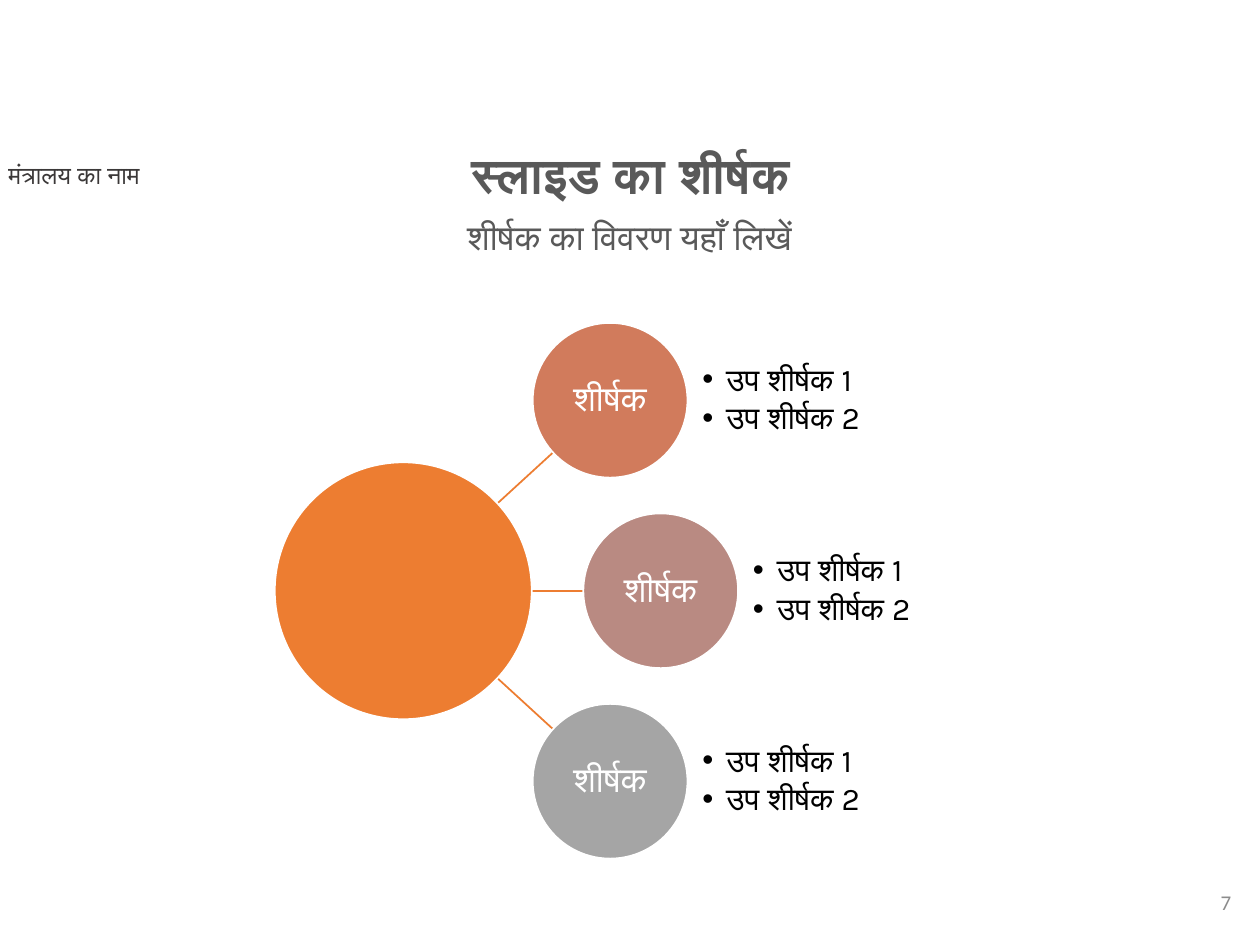
from lxml import etree
from pptx import Presentation
from pptx.dml.color import RGBColor
from pptx.enum.shapes import MSO_CONNECTOR, MSO_SHAPE
from pptx.enum.text import MSO_ANCHOR, PP_ALIGN
from pptx.oxml.ns import qn
from pptx.util import Cm, Pt

STRAIGHT = MSO_CONNECTOR.STRAIGHT
ELLIPSE = MSO_SHAPE.OVAL
TOP, MIDDLE = MSO_ANCHOR.TOP, MSO_ANCHOR.MIDDLE
LEFT, CENTER, RIGHT = PP_ALIGN.LEFT, PP_ALIGN.CENTER, PP_ALIGN.RIGHT

ORANGE, WHITE, BLACK, GREY = "ED7D31", "FFFFFF", "000000", "595959"
HUB_X, HUB_Y, HUB_SIZE = 8.13, 11.91, 5.18
NODE_SIZE, NODE_PITCH = 3.12, 3.84
NODES = [(12.3, "D17B5C"), (13.32, "B98A82"), (12.3, "A5A5A5")]
SUBTITLES = ["उप शीर्षक 1", "उप शीर्षक 2"]


def color(value):
    return RGBColor.from_string(value)


def add_bullet(para, indent):
    properties = para._p.get_or_add_pPr()
    properties.set("marL", str(Cm(indent)))
    properties.set("indent", str(-Cm(indent)))
    etree.SubElement(properties, qn("a:buFont")).set("typeface", "Arial")
    etree.SubElement(properties, qn("a:buChar")).set("char", "•")


def write(frame, lines, size=18, font="Calibri", fill=BLACK, bold=False,
          align=LEFT, anchor=TOP, spacing=1.0, after=0, inset=None, bullet=False):
    frame.word_wrap = True
    frame.vertical_anchor = anchor
    if inset is not None:
        frame.margin_left = frame.margin_right = Cm(inset)
        frame.margin_top = frame.margin_bottom = Cm(inset)
    for index, line in enumerate(lines):
        para = frame.add_paragraph() if index else frame.paragraphs[0]
        para.alignment = align
        para.line_spacing = spacing
        para.space_after = Pt(after)
        if bullet:
            add_bullet(para, 0.48)
        span = para.add_run()
        span.text = line
        span.font.name = font
        span.font.size = Pt(size)
        span.font.bold = bold
        span.font.color.rgb = color(fill)


def add_text(page, lines, left, top, width, height, **style):
    box = page.shapes.add_textbox(Cm(left), Cm(top), Cm(width), Cm(height))
    write(box.text_frame, lines, **style)


def add_circle(page, x, y, size, fill):
    circle = page.shapes.add_shape(
        ELLIPSE, Cm(x - size / 2), Cm(y - size / 2), Cm(size), Cm(size))
    circle.shadow.inherit = False
    circle.fill.solid()
    circle.fill.fore_color.rgb = color(fill)
    circle.line.color.rgb = color(WHITE)
    circle.line.width = Pt(1)
    return circle


def add_line(page, x1, y1, x2, y2):
    line = page.shapes.add_connector(STRAIGHT, Cm(x1), Cm(y1), Cm(x2), Cm(y2))
    line.line.color.rgb = color(ORANGE)
    line.line.width = Pt(1)
    etree.SubElement(line._element.spPr, qn("a:effectLst"))


def add_spokes(page):
    start = 9.96
    for side in (1, -1):
        add_line(page, start, HUB_Y + side * 1.7, 11.15, HUB_Y + side * 2.79)
    add_line(page, start, HUB_Y, NODES[1][0] - NODE_SIZE / 2, HUB_Y)


def add_node(page, x, y, fill):
    circle = add_circle(page, x, y, NODE_SIZE, fill)
    write(circle.text_frame, ["शीर्षक"], size=20, font="Karla", fill=WHITE,
          align=CENTER, anchor=MIDDLE, spacing=0.9, after=7, inset=0.03)
    add_text(page, SUBTITLES, x + 1.86, y - NODE_SIZE / 2, 4.68, NODE_SIZE,
             font="Karla", anchor=MIDDLE, spacing=0.9, after=2.7, inset=0,
             bullet=True)


def main():
    deck = Presentation()
    deck.slide_width, deck.slide_height = Cm(25.4), Cm(19.05)
    page = deck.slides.add_slide(deck.slide_layouts[6])

    add_text(page, ["मंत्रालय का नाम"], -0.08, 3.1, 5.54, 0.86, size=14, fill="3B3838")
    add_spokes(page)
    add_circle(page, HUB_X, HUB_Y, HUB_SIZE, ORANGE)
    for row, (x, fill) in enumerate(NODES):
        add_node(page, x, HUB_Y + (row - 1) * NODE_PITCH, fill)
    add_text(page, ["7"], 19.35, 17.68, 5.72, 1.02, size=12, fill="8C8C8C",
             align=RIGHT, anchor=MIDDLE)
    add_text(page, ["शीर्षक का विवरण यहाँ लिखें"], 3.71, 4.32, 17.96, 1.6, size=20,
             fill=GREY, align=CENTER, spacing=0.9)
    add_text(page, ["स्लाइड का शीर्षक"], 4.72, 2.92, 15.98, 1.19, size=28,
             fill=GREY, bold=True, align=CENTER, spacing=0.9)

    deck.save("out.pptx")


if __name__ == "__main__":
    main()
